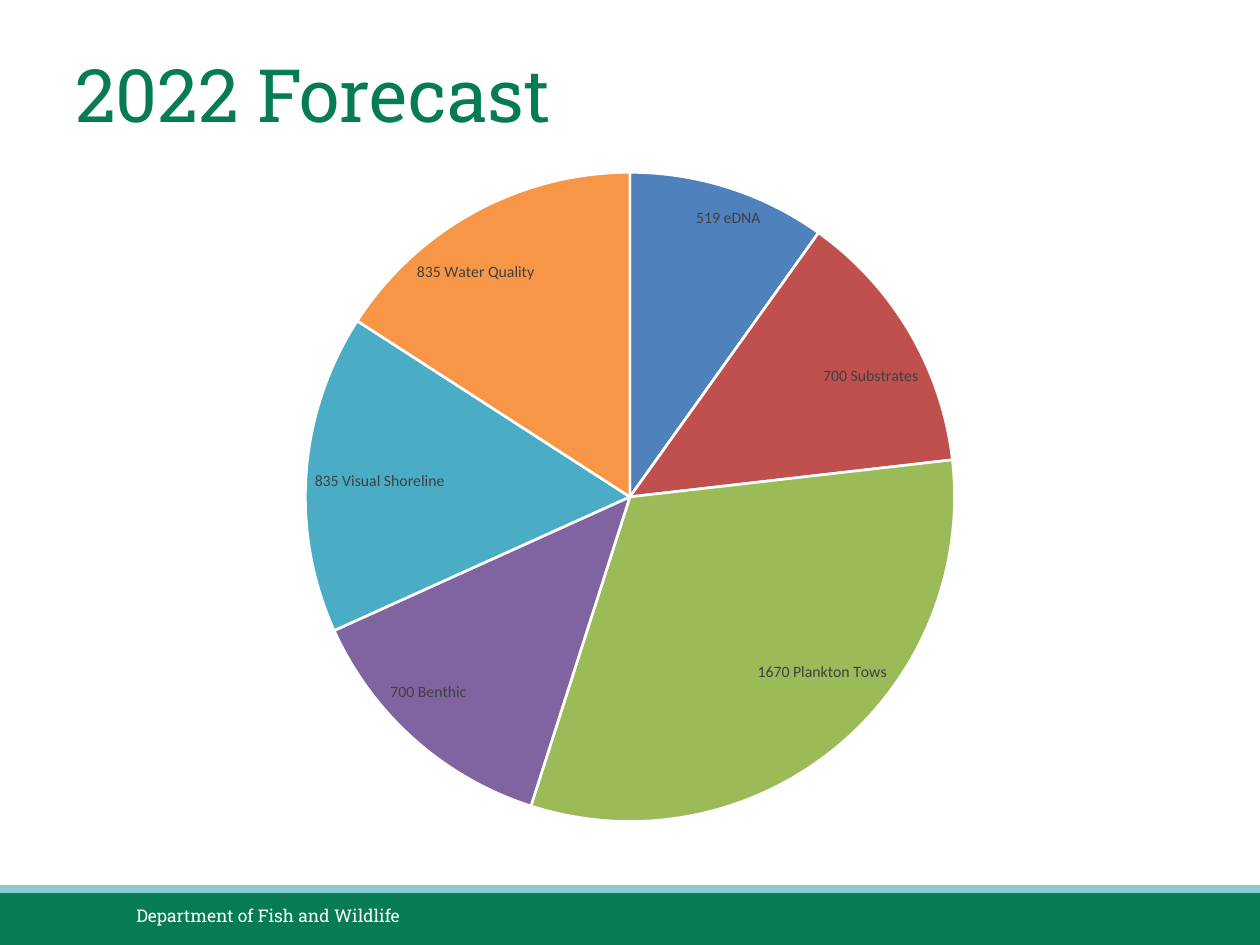
from lxml import etree
from pptx import Presentation
from pptx.chart.data import CategoryChartData
from pptx.dml.color import RGBColor
from pptx.enum.chart import XL_CHART_TYPE, XL_LABEL_POSITION
from pptx.enum.shapes import MSO_SHAPE
from pptx.enum.text import MSO_ANCHOR
from pptx.oxml.ns import qn
from pptx.util import Pt

colors = {
    "green": "067B54",
    "aqua": "8ACCCE",
    "white": "FFFFFF",
    "black": "000000",
    "label": "404040",
}
surveys = [
    ("eDNA", 519, "4F81BD", 19.4, 8.2),
    ("Substrates", 700, "C0504D", 8.6, 17.7),
    ("Plankton Tows", 1670, "9BBB59", 31.7, -34.9),
    ("Benthic", 700, "8064A2", -16.3, -18.3),
    ("Visual Shoreline", 835, "4BACC6", 0.6, 4.6),
    ("Water Quality", 835, "F79646", -35.1, 25.7),
]
chart_left, chart_top, chart_width, chart_height = 54, 77.8, 588.2, 401.8
pie_left, pie_top, pie_size = 174.5, 98.5, 371


def set_font(font, name, size, color):
    font.name = name
    font.size = Pt(size)
    font.color.rgb = RGBColor.from_string(colors[color])


def add_layout(layout, settings):
    manual = etree.SubElement(layout, qn("c:manualLayout"))
    for tag, value in settings.items():
        etree.SubElement(manual, qn(f"c:{tag}")).set("val", str(value))


deck = Presentation()
deck.slide_width, deck.slide_height = Pt(720), Pt(540)
page = deck.slides.add_slide(deck.slide_layouts[6])

for top, height, color in [(509.8, 30.2, "green"), (505.8, 4.4, "aqua")]:
    band = page.shapes.add_shape(MSO_SHAPE.RECTANGLE, 0, Pt(top), Pt(720), Pt(height))
    band.shadow.inherit = False
    band.fill.solid()
    band.fill.fore_color.rgb = RGBColor.from_string(colors[color])
    band.line.fill.background()

for text, left, top, width, height, size, color in [
    ("Department of Fish and Wildlife", 70.8, 512.6, 228, 21.6, 10, "white"),
    ("2022 Forecast", 36, 17, 648, 72.7, 42, "green"),
]:
    box = page.shapes.add_textbox(Pt(left), Pt(top), Pt(width), Pt(height))
    box.text_frame.word_wrap = True
    box.text_frame.vertical_anchor = MSO_ANCHOR.MIDDLE
    para = box.text_frame.paragraphs[0]
    para.text = text
    set_font(para.font, "Roboto Slab", size, color)

data = CategoryChartData()
data.categories = [str(number) for number in range(1, len(surveys) + 1)]
data.add_series("Series 1", [survey[1] for survey in surveys])
chart = page.shapes.add_chart(
    XL_CHART_TYPE.PIE, Pt(chart_left), Pt(chart_top), Pt(chart_width), Pt(chart_height), data
).chart
chart.has_legend = False
chart.has_title = False
set_font(chart.font, "Calibri", 10, "black")

pie = chart.plots[0]
pie.vary_by_categories = True
series = pie.series[0]
labels = series.data_labels
labels.show_value = True
labels.position = XL_LABEL_POSITION.INSIDE_END
set_font(labels.font, "Calibri", 9, "label")

for index, (name, count, color, shift_x, shift_y) in enumerate(surveys):
    point = series.points[index]
    point.format.fill.solid()
    point.format.fill.fore_color.rgb = RGBColor.from_string(color)
    point.format.line.color.rgb = RGBColor.from_string(colors["white"])
    point.format.line.width = Pt(1.5)
    label = point.data_label
    span = label.text_frame.paragraphs[0].add_run()
    span.text = f"{count} {name}"
    set_font(span.font, "Calibri", 9, "label")
    label.position = XL_LABEL_POSITION.INSIDE_END

for leader in chart.element.iter(qn("c:showLeaderLines")):
    leader.set("val", "0")

for element, survey in zip(chart.element.iter(qn("c:dLbl")), surveys):
    layout = element.find(qn("c:layout"))
    if layout is None:
        layout = etree.Element(qn("c:layout"))
        element.insert(1, layout)
    add_layout(layout, {"x": survey[3] / chart_width, "y": survey[4] / chart_height})

plot_area = chart.element.find(f".//{qn('c:plotArea')}")
layout = plot_area.find(qn("c:layout"))
if layout is None:
    layout = etree.Element(qn("c:layout"))
    plot_area.insert(0, layout)
add_layout(layout, {
    "layoutTarget": "inner",
    "xMode": "edge",
    "yMode": "edge",
    "x": (pie_left - chart_left) / chart_width,
    "y": (pie_top - chart_top) / chart_height,
    "w": pie_size / chart_width,
    "h": pie_size / chart_height,
})

deck.save("out.pptx")
